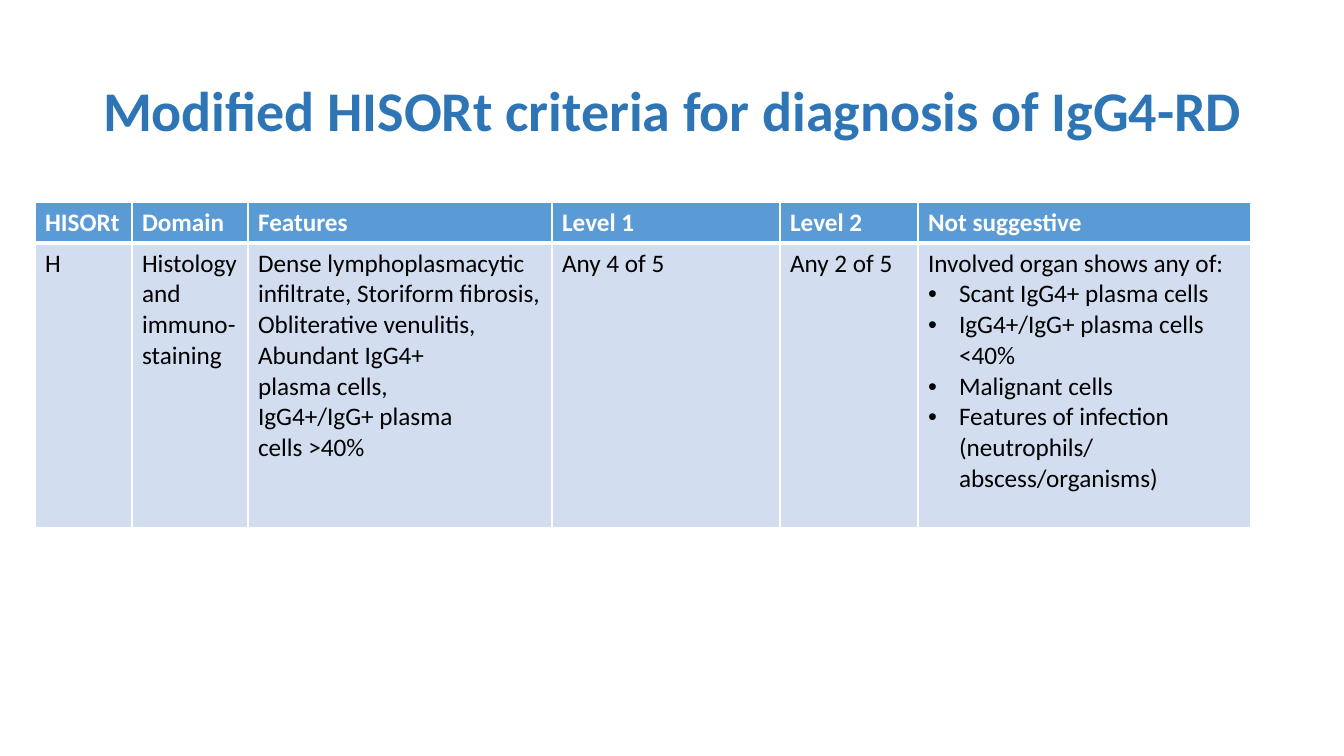
import pptx
import pptx.dml.color
import pptx.enum.text
import pptx.oxml
import pptx.oxml.ns
import pptx.util

# Content
TITLE = "Modified HISORt criteria for diagnosis of IgG4-RD"
HEADERS = ["HISORt", "Domain", "Features", "Level 1", "Level 2", "Not suggestive"]
# Each cell is a list of paragraphs; those after the first are bulleted
CRITERIA = [
    ["H"],
    ["Histology and\nimmuno-staining"],
    ["Dense lymphoplasmacytic\ninfiltrate, Storiform fibrosis,\n"
     "Obliterative venulitis,\nAbundant IgG4+\nplasma cells,\n"
     "IgG4+/IgG+ plasma\ncells >40%"],
    ["Any 4 of 5"],
    ["Any 2 of 5"],
    ["Involved organ shows any of:",
     "Scant IgG4+ plasma cells",
     "IgG4+/IgG+ plasma cells <40%",
     "Malignant cells",
     "Features of infection (neutrophils/ abscess/organisms)"],
]
ROWS = [[[header] for header in HEADERS], CRITERIA]

# Layout in px
SLIDE = (1344, 756)
TITLE_BOX = (93, 40, 1159, 146)
TABLE_LEFT, TABLE_TOP = 35, 202
COL_WIDTHS = [97, 116, 304, 228, 138, 333]
ROW_HEIGHTS = [41, 285]
BULLET_INDENT = 31

FONT = "Calibri"
COLORS = {"title": "2E75B6", "header": "5B9BD5", "body": "D2DEEF",
          "white": "FFFFFF", "black": "000000"}


def px(n):
    return pptx.util.Emu(round(n * 914400 / 100.8))


def rgb(name):
    return pptx.dml.color.RGBColor.from_string(COLORS[name])


def format_runs(p, size, color, bold):
    for r in p.runs:
        r.font.name = FONT
        r.font.size = pptx.util.Pt(size)
        r.font.bold = bold
        r.font.color.rgb = rgb(color)


def add_bullet(p):
    pPr = p._p.get_or_add_pPr()
    pPr.set("marL", str(px(BULLET_INDENT)))
    pPr.set("indent", str(-px(BULLET_INDENT)))
    ns = pptx.oxml.ns.nsdecls("a")
    pPr.append(pptx.oxml.parse_xml(f'<a:buFont {ns} typeface="Arial"/>'))
    pPr.append(pptx.oxml.parse_xml(f'<a:buChar {ns} char="•"/>'))


def set_borders(cell, top, bottom):
    tcPr = cell._tc.get_or_add_tcPr()
    widths = {"lnL": 1, "lnR": 1, "lnT": top, "lnB": bottom}
    for i, (side, width) in enumerate(widths.items()):
        tcPr.insert(i, pptx.oxml.parse_xml(
            f'<a:{side} {pptx.oxml.ns.nsdecls("a")} w="{pptx.util.Pt(width)}">'
            f'<a:solidFill><a:srgbClr val="{COLORS["white"]}"/></a:solidFill>'
            f'</a:{side}>'))


prs = pptx.Presentation()
prs.slide_width, prs.slide_height = map(px, SLIDE)
slide = prs.slides.add_slide(prs.slide_layouts[5])

# Title
title = slide.shapes.title
title.left, title.top, title.width, title.height = map(px, TITLE_BOX)
tf = title.text_frame
tf.text = TITLE
tf.word_wrap = True
tf.auto_size = pptx.enum.text.MSO_AUTO_SIZE.NONE
tf.vertical_anchor = pptx.enum.text.MSO_ANCHOR.MIDDLE
p = tf.paragraphs[0]
p.alignment = pptx.enum.text.PP_ALIGN.LEFT
p.line_spacing = 0.9
format_runs(p, 40, "title", True)

# Criteria table
table = slide.shapes.add_table(
    len(ROWS), len(HEADERS), px(TABLE_LEFT), px(TABLE_TOP),
    px(sum(COL_WIDTHS)), px(sum(ROW_HEIGHTS))).table
for col, width in zip(table.columns, COL_WIDTHS):
    col.width = px(width)
for row, height in zip(table.rows, ROW_HEIGHTS):
    row.height = px(height)

for i, row in enumerate(ROWS):
    is_header = i == 0
    for j, paragraphs in enumerate(row):
        cell = table.cell(i, j)
        cell.fill.solid()
        cell.fill.fore_color.rgb = rgb("header" if is_header else "body")
        set_borders(cell, *((1, 3) if is_header else (3, 1)))
        tf = cell.text_frame
        for k, text in enumerate(paragraphs):
            p = tf.add_paragraph() if k else tf.paragraphs[0]
            p.text = text
            if k:
                add_bullet(p)
            format_runs(p, 18, "white" if is_header else "black", is_header)

prs.save("out.pptx")
